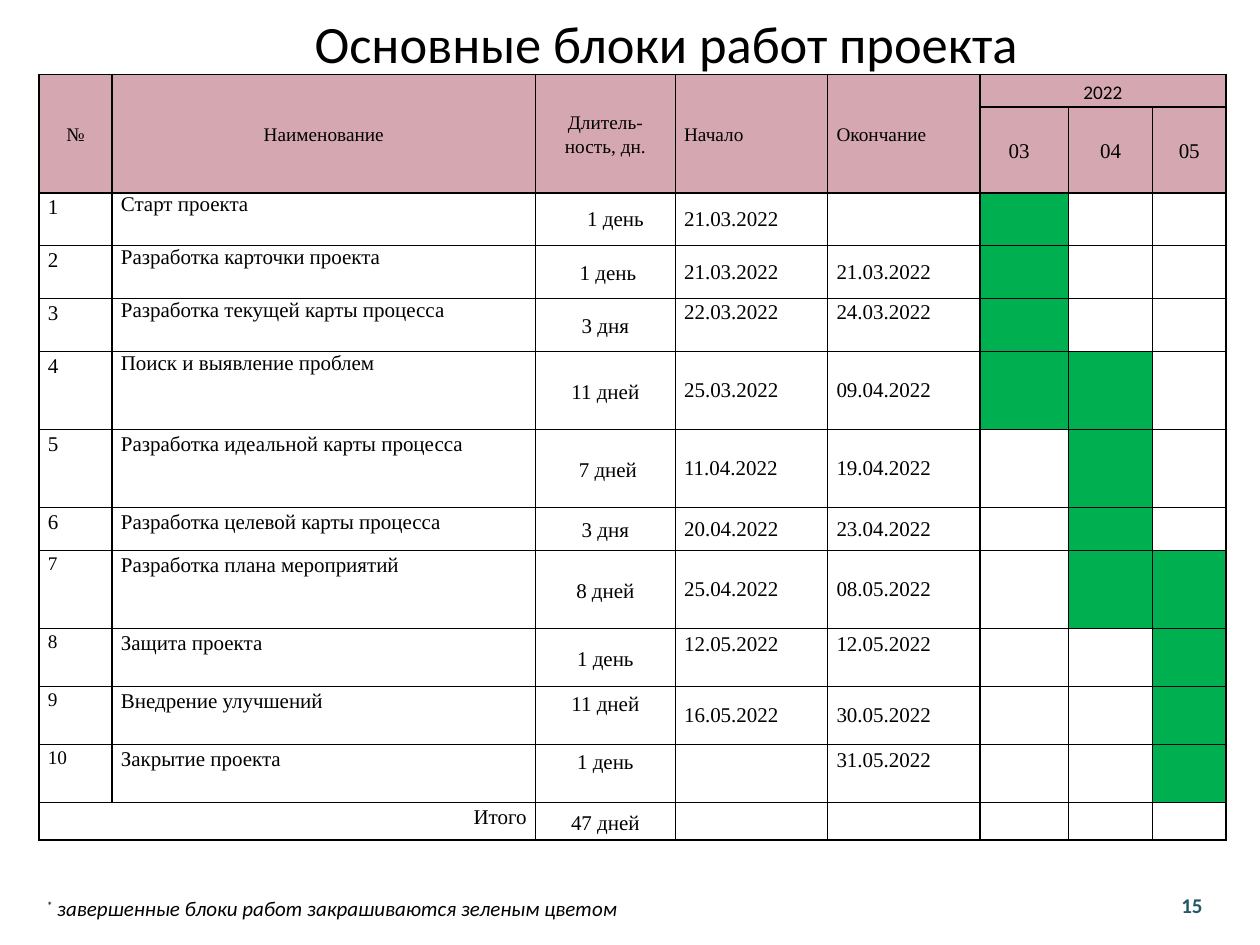
"""Build the slide with the main work blocks of the project."""
from dataclasses import dataclass, field
from typing import Any

from lxml.etree import SubElement
from pptx import Presentation
from pptx.dml.color import RGBColor
from pptx.enum.text import MSO_ANCHOR as Anchor, PP_ALIGN as Align
from pptx.oxml.ns import qn
from pptx.util import Inches, Pt

COLORS = {"text": "000000", "head": "D5A7B1", "done": "00B050", "plain": "FFFFFF", "number": "215968"}
SERIF, SANS = "Times New Roman", "Calibri"
COLUMNS = [0.58, 3.36, 1.11, 1.21, 1.21, 0.7, 0.67, 0.58]
HEADER_ROWS = [0.26, 0.68]
TOTAL_ROW = 0.28
LIFT = 0.2


@dataclass
class Style:
    size: float = 12
    font: str = SERIF
    color: str = "text"
    align: Any = Align.LEFT
    anchor: Any = Anchor.MIDDLE
    spacing: float = 1.0
    bold: bool = False
    italic: bool = False


@dataclass
class Task:
    name: str
    days: str
    start: str
    end: str
    done: str
    height: float
    number_size: float = 12
    name_spacing: float = 1.15
    days_spacing: float = 1.15
    days_indent: float = 0
    lifted: tuple[int, ...] = field(default_factory=tuple)


TASKS = [
    Task("Старт проекта", "1 день", "21.03.2022", "", "03", 0.42,
         name_spacing=1.0, days_spacing=1.0, days_indent=0.16),
    Task("Разработка карточки проекта", "1 день", "21.03.2022", "21.03.2022", "03", 0.42,
         name_spacing=1.0, days_indent=0.04),
    Task("Разработка текущей карты процесса", "3 дня", "22.03.2022", "24.03.2022", "03", 0.42,
         name_spacing=1.0, lifted=(3, 4)),
    Task("Поиск и выявление проблем", "11 дней", "25.03.2022", "09.04.2022", "03 04", 0.62,
         name_spacing=1.0),
    Task("Разработка идеальной карты процесса", "7 дней", "11.04.2022", "19.04.2022", "04", 0.62,
         days_indent=0.04),
    Task("Разработка целевой карты процесса", "3 дня", "20.04.2022", "23.04.2022", "04", 0.34),
    Task("Разработка плана мероприятий", "8 дней", "25.04.2022", "08.05.2022", "04 05", 0.62, 11),
    Task("Защита проекта", "1 день", "12.05.2022", "12.05.2022", "05", 0.46, 11, lifted=(3, 4)),
    Task("Внедрение улучшений", "11 дней", "16.05.2022", "30.05.2022", "05", 0.46, 11, lifted=(2,)),
    Task("Закрытие проекта", "1 день", "", "31.05.2022", "05", 0.46, 11, lifted=(2, 4)),
]
MONTHS = ["03", "04", "05"]


def rgb(name: str) -> RGBColor:
    """Return a named colour."""
    return RGBColor.from_string(COLORS[name])


def add_span(para, text: str, style: Style):
    """Append formatted text to a paragraph."""
    span = para.add_run()
    span.text = text
    formats = {"size": Pt(style.size), "name": style.font, "bold": style.bold, "italic": style.italic}
    for key, value in formats.items():
        setattr(span.font, key, value)
    span.font.color.rgb = rgb(style.color)
    return span


def write(frame, text: str, style: Style) -> None:
    """Write one paragraph per line of text."""
    for index, line in enumerate(text.split("\n")):
        para = frame.paragraphs[0] if index == 0 else frame.add_paragraph()
        para.alignment = style.align
        para.line_spacing = style.spacing
        add_span(para, line, style)


def add_box(page, place: tuple[float, ...], style: Style):
    """Add a wrapping text box and return its frame."""
    box = page.shapes.add_textbox(*map(Inches, place))
    frame = box.text_frame
    for key, value in {"word_wrap": True, "vertical_anchor": style.anchor}.items():
        setattr(frame, key, value)
    return frame


def draw_borders(cell) -> None:
    """Give a cell thin lines on all four sides."""
    properties = cell._tc.get_or_add_tcPr()
    for side in ("a:lnL", "a:lnR", "a:lnT", "a:lnB"):
        line = SubElement(properties, qn(side), w=str(Pt(1)))
        fill = SubElement(line, qn("a:solidFill"))
        SubElement(fill, qn("a:srgbClr"), val=COLORS["text"])


def fill_cell(cell, text: str, style: Style, left: float = 0, right: float = 0, bottom: float = 0) -> None:
    """Set the text, anchor and extra insets of a cell."""
    formats = {
        "vertical_anchor": style.anchor,
        "margin_left": Inches(0.07 + left),
        "margin_right": Inches(0.07 + right),
        "margin_bottom": Inches(bottom),
    }
    for key, value in formats.items():
        setattr(cell, key, value)
    if text:
        write(cell.text_frame, text, style)


def paint(cell, color: str) -> None:
    """Fill a cell with a named colour."""
    cell.fill.solid()
    cell.fill.fore_color.rgb = rgb(color)


def add_schedule(page):
    """Add the empty bordered table."""
    heights = [*HEADER_ROWS, *(task.height for task in TASKS), TOTAL_ROW]
    place = (0.31, 0.59, sum(COLUMNS), sum(heights))
    table = page.shapes.add_table(len(heights), len(COLUMNS), *map(Inches, place)).table
    table.first_row = table.horz_banding = False
    for column, width in zip(table.columns, COLUMNS):
        column.width = Inches(width)
    for index, (row, height) in enumerate(zip(table.rows, heights)):
        row.height = Inches(height)
        for cell in row.cells:
            cell.margin_top = cell.margin_bottom = 0
            draw_borders(cell)
            paint(cell, "head" if index < len(HEADER_ROWS) else "plain")
    return table


def fill_header(table) -> None:
    """Write the two header rows."""
    titles = ["№", "Наименование", "Длитель-\nность, дн.", "Начало", "Окончание"]
    for column, title in enumerate(titles):
        table.cell(0, column).merge(table.cell(1, column))
        align = Align.CENTER if column < 3 else Align.LEFT
        fill_cell(table.cell(0, column), title, Style(11, align=align, spacing=1.15))
    table.cell(0, 5).merge(table.cell(0, 7))
    fill_cell(table.cell(0, 5), "2022", Style(11, SANS, align=Align.CENTER, spacing=1.15))
    for column, month in enumerate(MONTHS, len(titles)):
        fill_cell(table.cell(1, column), month, Style(align=Align.CENTER, spacing=1.15),
                  right=0.08 if month == "03" else 0)


def fill_task(table, number: int, task: Task) -> None:
    """Write one task and mark its completed months."""
    row = number + 1
    texts = [str(number), task.name, task.days, task.start, task.end]
    styles = [
        Style(task.number_size, anchor=Anchor.TOP, spacing=1.15),
        Style(anchor=Anchor.TOP, spacing=task.name_spacing),
        Style(align=Align.CENTER, spacing=task.days_spacing),
        Style(),
        Style(),
    ]
    for column, (text, style) in enumerate(zip(texts, styles)):
        fill_cell(table.cell(row, column), text, style,
                  left=task.days_indent if column == 2 else 0,
                  bottom=LIFT if column in task.lifted else 0)
    for column, month in enumerate(MONTHS, len(texts)):
        if month in task.done.split():
            paint(table.cell(row, column), "done")


def fill_total(table) -> None:
    """Write the closing row."""
    row = len(table.rows) - 1
    table.cell(row, 0).merge(table.cell(row, 1))
    fill_cell(table.cell(row, 0), "Итого", Style(align=Align.RIGHT, anchor=Anchor.TOP, spacing=1.15))
    fill_cell(table.cell(row, 2), "47 дней", Style(align=Align.CENTER, spacing=1.15))


def main() -> None:
    """Build and save the deck."""
    deck = Presentation()
    deck.slide_width, deck.slide_height = Inches(10), Inches(7.5)
    page = deck.slides.add_slide(deck.slide_layouts[6])

    title = Style(30, SANS, align=Align.CENTER)
    write(add_box(page, (0.54, 0, 9.5, 0.68), title), "Основные блоки работ проекта", title)

    note = Style(12, SANS, anchor=Anchor.TOP, italic=True)
    para = add_box(page, (0.27, 7.06, 8.51, 0.3), note).paragraphs[0]
    star = add_span(para, "*", note)
    star.font._element.set("baseline", "30000")
    add_span(para, " завершенные блоки работ закрашиваются зеленым цветом", note)

    number = Style(12, SANS, "number", Align.CENTER, bold=True)
    write(add_box(page, (9.09, 7.03, 0.74, 0.31), number), "15", number)

    table = add_schedule(page)
    fill_header(table)
    for index, task in enumerate(TASKS, 1):
        fill_task(table, index, task)
    fill_total(table)
    deck.save("out.pptx")


if __name__ == "__main__":
    main()
